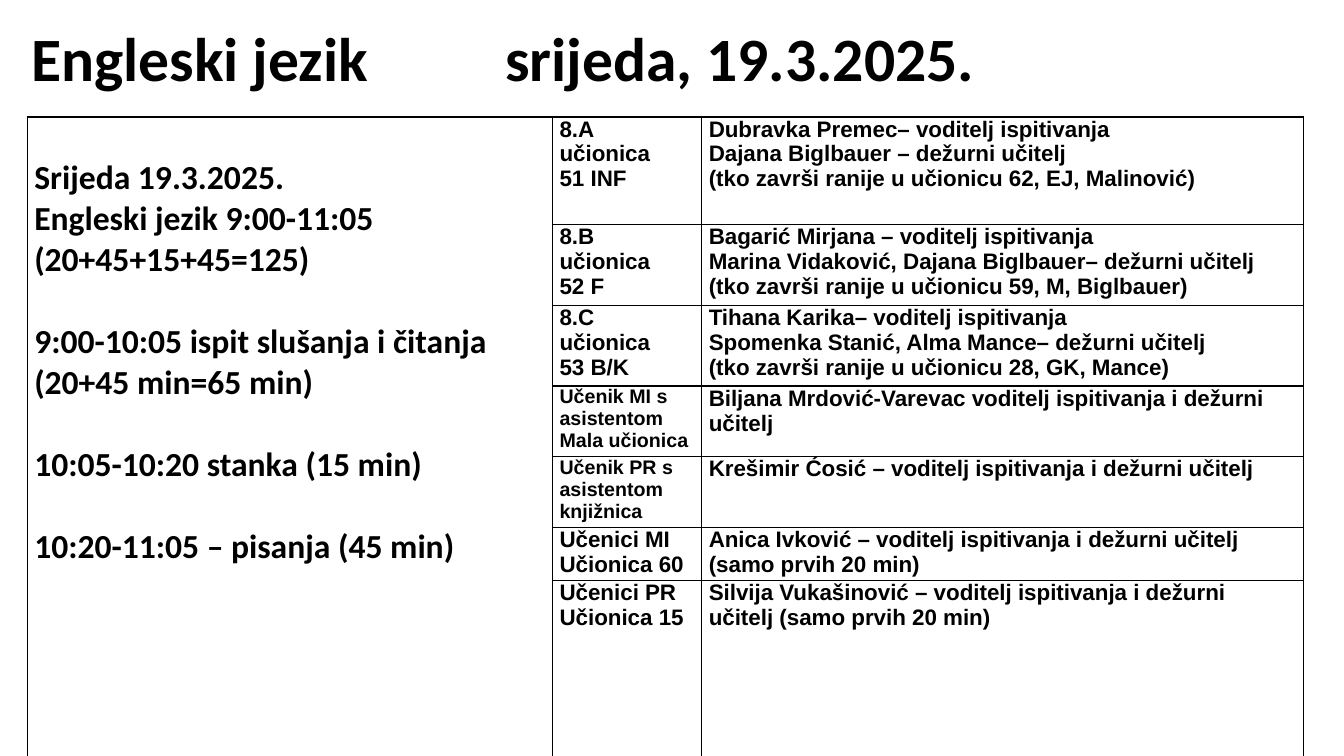
from dataclasses import dataclass

from lxml.etree import SubElement
from pptx import Presentation
from pptx.dml.color import RGBColor
from pptx.enum.text import MSO_ANCHOR as Anchor, MSO_AUTO_SIZE as Auto, PP_ALIGN as Align
from pptx.oxml.ns import qn
from pptx.table import _Cell as Cell
from pptx.util import Inches, Pt


@dataclass(frozen=True)
class Theme:
    ink: str = "000000"
    head: str = "Calibri"
    body: str = "Arial"
    title: int = 44
    plan: int = 24
    text: int = 16
    small: int = 14
    gap: float = 29.3
    rule: float = 1


@dataclass(frozen=True)
class Room:
    height: float
    place: list[str]
    staff: list[str]
    size: int


THEME = Theme()
TITLE = "Engleski jezik\tsrijeda, 19.3.2025."
COLS = [5.21, 1.48, 5.97]
PLAN = [
    ["Srijeda 19.3.2025.", "Engleski jezik 9:00-11:05", "(20+45+15+45=125)"],
    ["9:00-10:05 ispit slušanja i čitanja (20+45 min=65 min)"],
    ["10:05-10:20 stanka (15 min)"],
    ["10:20-11:05 – pisanja (45 min)"],
]
ROOMS = [
    Room(1.07, ["8.A", "učionica", "51 INF"],
         ["Dubravka Premec– voditelj ispitivanja",
          "Dajana Biglbauer – dežurni učitelj",
          "(tko završi ranije u učionicu 62, EJ, Malinović)"], THEME.text),
    Room(0.8, ["8.B", "učionica", "52 F"],
         ["Bagarić Mirjana – voditelj ispitivanja",
          "Marina Vidaković, Dajana Biglbauer– dežurni učitelj",
          "(tko završi ranije u učionicu 59, M, Biglbauer)"], THEME.text),
    Room(0.8, ["8.C", "učionica", "53 B/K"],
         ["Tihana Karika– voditelj ispitivanja",
          "Spomenka Stanić, Alma Mance– dežurni učitelj",
          "(tko završi ranije u učionicu 28, GK, Mance)"], THEME.text),
    Room(0.7, ["Učenik MI s asistentom", "Mala učionica"],
         ["Biljana Mrdović-Varevac voditelj ispitivanja i dežurni učitelj"], THEME.small),
    Room(0.7, ["Učenik PR s asistentom", "knjižnica"],
         ["Krešimir Ćosić – voditelj ispitivanja i dežurni učitelj"], THEME.small),
    Room(0.53, ["Učenici MI", "Učionica 60"],
         ["Anica Ivković – voditelj ispitivanja i dežurni učitelj (samo prvih 20 min)"],
         THEME.text),
    Room(1.8, ["Učenici PR", "Učionica 15"],
         ["Silvija Vukašinović – voditelj ispitivanja i dežurni učitelj (samo prvih 20 min)"],
         THEME.text),
]


def write(frame, lines: list[str], *, size: int, font: str = THEME.body,
          space: float = 1, gaps: tuple[int, ...] = ()) -> None:
    """Fill a frame with lines; those numbered in gaps get space above."""
    for i, line in enumerate(lines):
        par = frame.paragraphs[0] if i == 0 else frame.add_paragraph()
        par.alignment = Align.LEFT
        par.line_spacing = space
        par.space_before = Pt(THEME.gap if i in gaps else 0)
        run = par.add_run()
        run.text = line
        run.font.name = font
        run.font.size = Pt(size)
        run.font.bold = True
        run.font.color.rgb = RGBColor.from_string(THEME.ink)


def style(cell: Cell) -> None:
    """Give a cell thin borders, no fill and tight margins."""
    cell.margin_left = cell.margin_right = Inches(0.07)
    cell.margin_top = cell.margin_bottom = 0
    props = cell._tc.get_or_add_tcPr()
    for side in ("lnL", "lnR", "lnT", "lnB"):
        edge = SubElement(props, qn(f"a:{side}"), w=str(Pt(THEME.rule)))
        fill = SubElement(edge, qn("a:solidFill"))
        SubElement(fill, qn("a:srgbClr"), val=THEME.ink)
    cell.fill.background()


def add_title(slide) -> None:
    title = slide.shapes.title
    title.left, title.top = Inches(0.21), Inches(0.13)
    title.width, title.height = Inches(10.93), Inches(0.97)
    frame = title.text_frame
    frame.word_wrap = True
    frame.auto_size = Auto.NONE
    frame.vertical_anchor = Anchor.MIDDLE
    write(frame, [TITLE], size=THEME.title, font=THEME.head, space=0.9)
    props = frame.paragraphs[0]._p.get_or_add_pPr()
    tabs = SubElement(props, qn("a:tabLst"))
    SubElement(tabs, qn("a:tab"), pos=str(Inches(4.7)), algn="l")


def add_rooms(slide) -> None:
    high = sum(room.height for room in ROOMS)
    table = slide.shapes.add_table(
        len(ROOMS), len(COLS), Inches(0.27), Inches(1.16),
        Inches(sum(COLS)), Inches(high)).table
    table.first_row = table.horz_banding = False
    for col, width in zip(table.columns, COLS):
        col.width = Inches(width)
    for cell in table.iter_cells():
        style(cell)
    for i, room in enumerate(ROOMS):
        table.rows[i].height = Inches(room.height)
        write(table.cell(i, 1).text_frame, room.place, size=room.size)
        write(table.cell(i, 2).text_frame, room.staff, size=THEME.text)
    plan = table.cell(0, 0)
    plan.merge(table.cell(len(ROOMS) - 1, 0))
    plan.margin_top = Pt(THEME.gap)
    lines = [line for part in PLAN for line in part]
    heads = tuple(lines.index(part[0]) for part in PLAN[1:])
    write(plan.text_frame, lines, size=THEME.plan, font=THEME.head, gaps=heads)


def main() -> None:
    deck = Presentation()
    deck.slide_width, deck.slide_height = Inches(13.33), Inches(7.5)
    slide = deck.slides.add_slide(deck.slide_layouts[5])
    add_title(slide)
    add_rooms(slide)
    deck.save("out.pptx")


if __name__ == "__main__":
    main()
